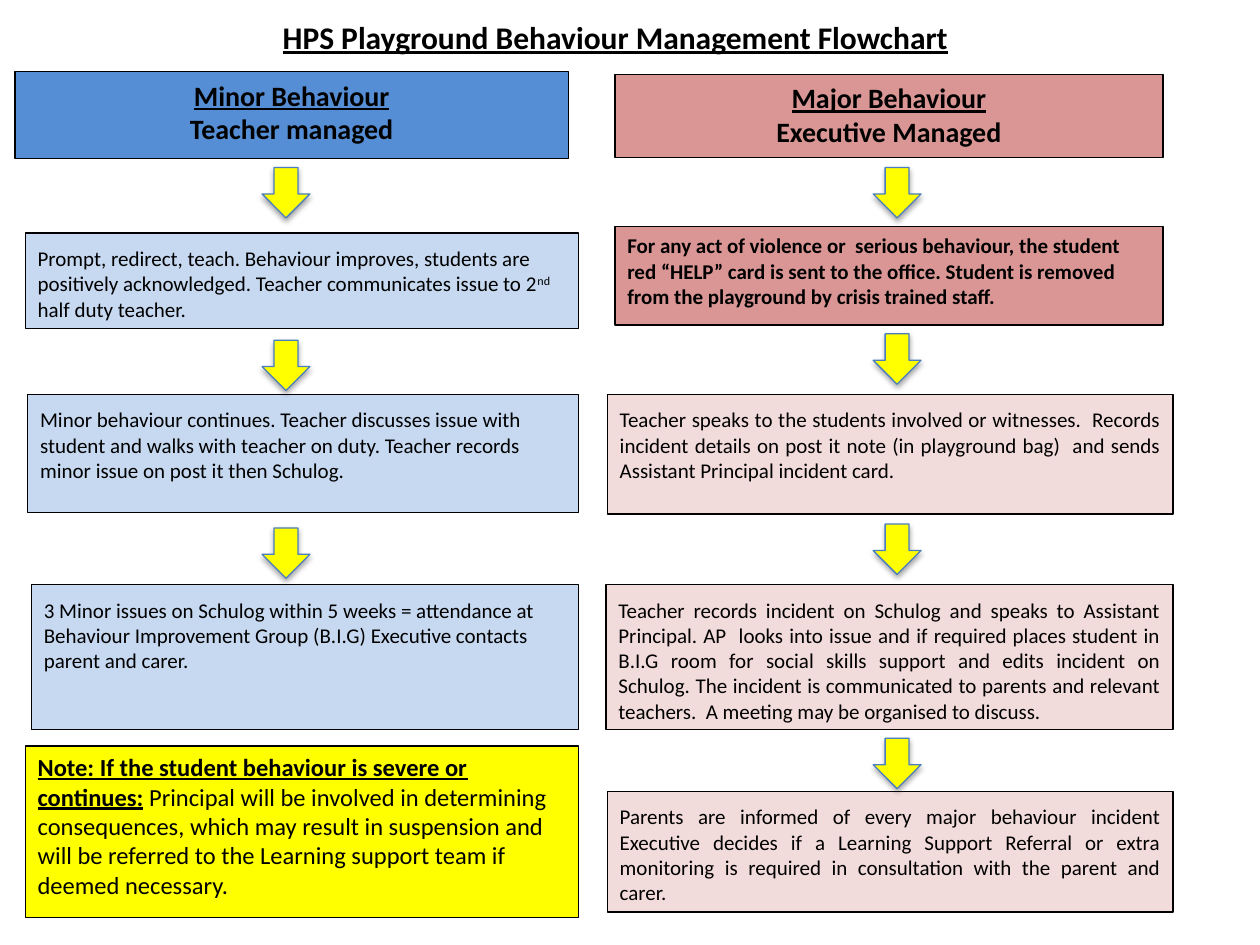
from pptx import Presentation
from pptx.dml.color import RGBColor
from pptx.enum.shapes import MSO_SHAPE
from pptx.enum.text import MSO_ANCHOR, MSO_AUTO_SIZE, PP_ALIGN
from pptx.util import Inches, Pt

LEFT, CENTER, JUSTIFY = PP_ALIGN.LEFT, PP_ALIGN.CENTER, PP_ALIGN.JUSTIFY
TOP = MSO_ANCHOR.TOP
FIT_TEXT = MSO_AUTO_SIZE.SHAPE_TO_FIT_TEXT
RECTANGLE, DOWN_ARROW = MSO_SHAPE.RECTANGLE, MSO_SHAPE.DOWN_ARROW

BLACK = RGBColor(0x00, 0x00, 0x00)
YELLOW = RGBColor(0xFF, 0xFF, 0x00)
BLUE = RGBColor(0x55, 0x8E, 0xD5)
PALE_BLUE = RGBColor(0xC6, 0xD9, 0xF1)
RED = RGBColor(0xD9, 0x96, 0x94)
PALE_RED = RGBColor(0xF2, 0xDC, 0xDB)
ARROW_BLUE = RGBColor(0x4B, 0x7E, 0xBC)


def add_run(paragraph, text, size, bold=False, underline=False, raised=False):
    run = paragraph.add_run()
    run.text = text
    font = run.font
    font.name, font.size = "Calibri", Pt(size)
    font.bold, font.underline = bold, underline
    font.color.rgb = BLACK
    if raised:
        font._element.set("baseline", "30000")


def add_box(left, top, width, height, fill, margin=0.1):
    """Add an outlined rectangle and return its empty text frame."""
    box = slide.shapes.add_shape(
        RECTANGLE, Inches(left), Inches(top), Inches(width), Inches(height))
    box.shadow.inherit = False
    box.fill.solid()
    box.fill.fore_color.rgb = fill
    box.line.color.rgb = BLACK
    box.line.width = Pt(0.75)
    frame = box.text_frame
    frame.word_wrap = True
    frame.vertical_anchor = TOP
    frame.margin_left = frame.margin_right = Inches(0.1)
    frame.margin_top = frame.margin_bottom = Inches(margin)
    return frame


presentation = Presentation()
presentation.slide_width, presentation.slide_height = Inches(10), Inches(7.5)
slide = presentation.slides.add_slide(presentation.slide_layouts[5])

# Title
title = slide.shapes.title
title.left, title.top = Inches(2.12), Inches(0.09)
title.width, title.height = Inches(5.53), Inches(0.4)
title_frame = title.text_frame
title_frame.word_wrap = False
title_frame.auto_size = FIT_TEXT
title_frame.vertical_anchor = TOP
title_paragraph = title_frame.paragraphs[0]
title_paragraph.alignment = CENTER
add_run(title_paragraph, "HPS Playground Behaviour Management Flowchart", 18, True, True)

# Column headings
headings = [
    ((0.12, 0.57, 4.39, 0.69), BLUE, "Minor Behaviour", "Teacher managed"),
    ((4.88, 0.59, 4.35, 0.66), RED, "Major Behaviour", "Executive Managed"),
]
for place, fill, behaviour, manager in headings:
    frame = add_box(*place, fill, margin=0.05)
    for paragraph, text, underline in (
            (frame.paragraphs[0], behaviour, True),
            (frame.add_paragraph(), manager, False)):
        paragraph.alignment = CENTER
        add_run(paragraph, text, 16, True, underline)

# Steps with one plain text each
steps = [
    ((0.22, 3.13, 4.37, 0.94), PALE_BLUE, LEFT,
     "Minor behaviour continues. Teacher discusses issue with student and walks "
     "with teacher on duty. Teacher records minor issue on post it then Schulog."),
    ((0.25, 4.64, 4.34, 1.15), PALE_BLUE, LEFT,
     "3 Minor issues on Schulog within 5 weeks = attendance at Behaviour "
     "Improvement Group (B.I.G) Executive contacts parent and carer."),
    ((4.82, 3.13, 4.49, 0.95), PALE_RED, JUSTIFY,
     "Teacher speaks to the students involved or witnesses.  Records incident "
     "details on post it note (in playground bag)  and sends Assistant Principal "
     "incident card."),
    ((4.81, 4.64, 4.5, 1.15), PALE_RED, JUSTIFY,
     "Teacher records incident on Schulog and speaks to Assistant Principal. "
     "AP  looks into issue and if required places student in B.I.G room for "
     "social skills support and edits incident on Schulog. The incident is "
     "communicated to parents and relevant teachers.  A meeting may be organised "
     "to discuss."),
    ((4.82, 6.28, 4.49, 0.96), PALE_RED, JUSTIFY,
     "Parents are informed of every major behaviour incident Executive decides "
     "if a Learning Support Referral or extra monitoring is required in "
     "consultation with the parent and carer."),
]
for place, fill, alignment, text in steps:
    paragraph = add_box(*place, fill).paragraphs[0]
    paragraph.alignment = alignment
    add_run(paragraph, text, 12)

# Steps with their own formatting
prompt = add_box(0.2, 1.85, 4.39, 0.76, PALE_BLUE).paragraphs[0]
prompt.alignment = LEFT
add_run(prompt, "Prompt, redirect, teach. Behaviour improves, students are positively "
        "acknowledged. Teacher communicates issue to 2", 12)
add_run(prompt, "nd", 12, raised=True)
add_run(prompt, " half duty teacher.", 12)

violence = add_box(4.88, 1.8, 4.35, 0.78, RED, margin=0.05).paragraphs[0]
violence.alignment = LEFT
add_run(violence, "For any act of violence or  serious behaviour, the student red “HELP” "
        "card is sent to the office. Student is removed from the playground by crisis "
        "trained staff.", 12, bold=True)

note = add_box(0.2, 5.92, 4.39, 1.36, YELLOW, margin=0.05).paragraphs[0]
note.alignment = LEFT
add_run(note, "Note: If the student behaviour is severe or continues:", 14, True, True)
add_run(note, " Principal will be involved in determining consequences, which may result "
        "in suspension and will be referred to the Learning support team if deemed "
        "necessary.", 14)

# Arrows between steps keep the theme's soft shadow
arrow_columns = [(2.08, (1.33, 2.7, 4.19)), (6.93, (1.33, 2.65, 4.16, 5.86))]
for left, tops in arrow_columns:
    for top in tops:
        arrow = slide.shapes.add_shape(
            DOWN_ARROW, Inches(left), Inches(top), Inches(0.38), Inches(0.4))
        arrow.fill.solid()
        arrow.fill.fore_color.rgb = YELLOW
        arrow.line.color.rgb = ARROW_BLUE
        arrow.line.width = Pt(0.75)

presentation.save("out.pptx")
